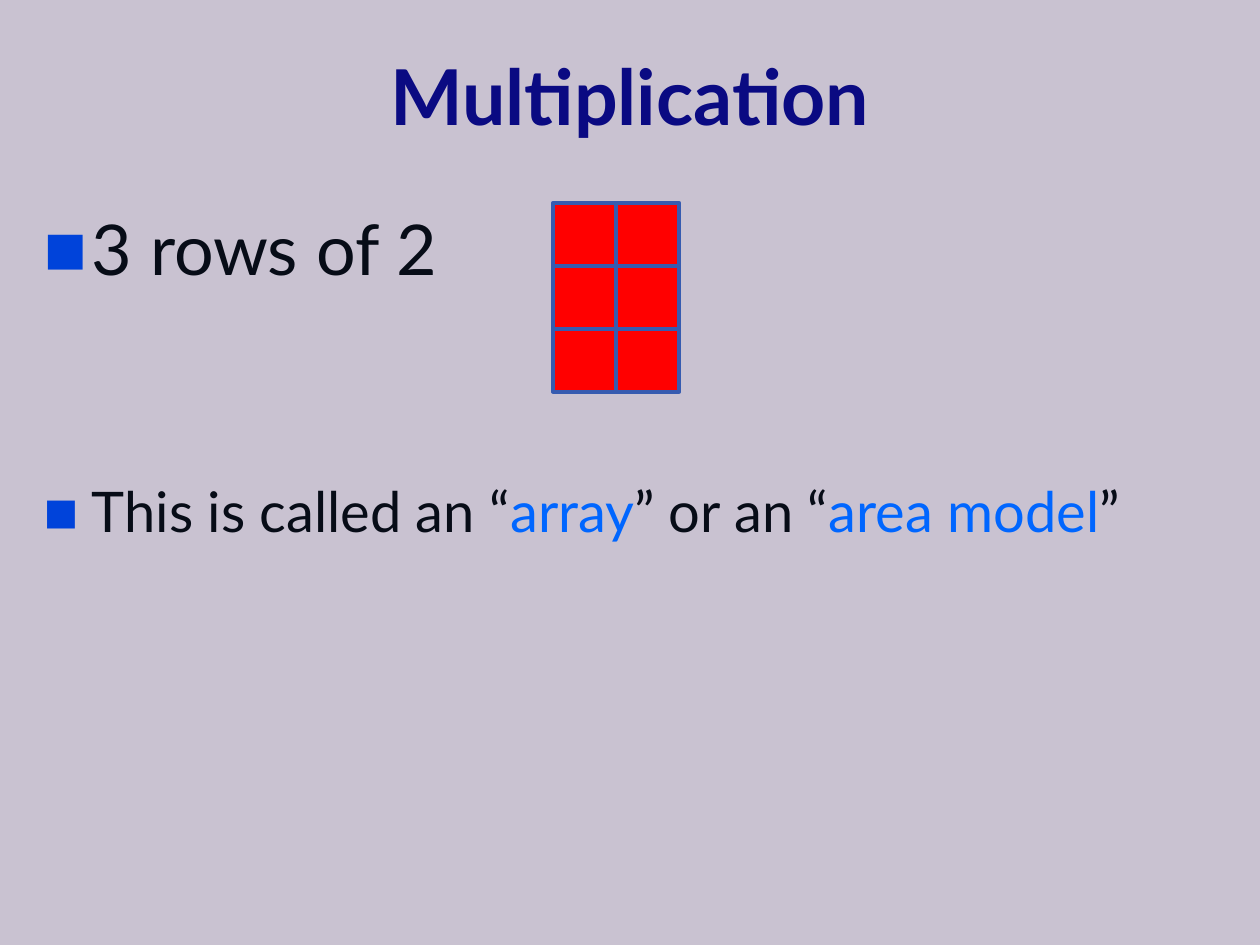
from itertools import product

from lxml.etree import SubElement
from pptx import Presentation
from pptx.dml.color import RGBColor
from pptx.enum.shapes import MSO_SHAPE
from pptx.enum.text import MSO_ANCHOR, PP_ALIGN
from pptx.oxml.ns import qn
from pptx.util import Inches, Pt

BACKGROUND = RGBColor(0xC9, 0xC2, 0xD1)
NAVY = RGBColor(0x0A, 0x0A, 0x82)
INK = RGBColor(0x07, 0x0C, 0x17)
TERM = RGBColor(0x00, 0x66, 0xFF)
BULLET = RGBColor(0x00, 0x43, 0xDA)
RED = RGBColor(0xFF, 0x00, 0x00)
OUTLINE = RGBColor(0x36, 0x5B, 0xB0)

FONT = "Lato"
ROWS, COLUMNS = 3, 2
CELL = Inches(0.5)
ARRAY_LEFT, ARRAY_TOP = Inches(4.39), Inches(1.61)
INDENT = Inches(0.38)


def add_span(para, text, color, **formats):
    span = para.add_run()
    span.text = text
    span.font.color.rgb = color
    for name, value in {"name": FONT, **formats}.items():
        setattr(span.font, name, value)


def add_bullet(para):
    """Give the paragraph a hanging indent and a small blue square."""
    props = para._p.get_or_add_pPr()
    props.set("marL", str(INDENT))
    props.set("indent", str(-INDENT))
    color = SubElement(props, qn("a:buClr"))
    SubElement(color, qn("a:srgbClr"), val=str(BULLET))
    SubElement(props, qn("a:buSzPct"), val="65000")
    SubElement(props, qn("a:buFont"), typeface=FONT)
    SubElement(props, qn("a:buChar"), char="■")


deck = Presentation()
deck.slide_width, deck.slide_height = Inches(10), Inches(7.5)
page = deck.slides.add_slide(deck.slide_layouts[6])
page.background.fill.solid()
page.background.fill.fore_color.rgb = BACKGROUND

# Title
margin = Inches(0.17)
title_box = page.shapes.add_textbox(
    margin, margin, deck.slide_width - 2 * margin, Inches(1.17))
title_box.text_frame.word_wrap = True
title_box.text_frame.vertical_anchor = MSO_ANCHOR.MIDDLE
title = title_box.text_frame.paragraphs[0]
title.alignment = PP_ALIGN.CENTER
add_span(title, "Multiplication", NAVY, size=Pt(44), bold=True)

# Bulleted statements, with room for the array between them
statements = [
    (Pt(40), Pt(0), [("3 rows of 2", INK)]),
    (Pt(32), Pt(107), [("This is called an “", INK), ("array", TERM),
                       ("” or an “", INK), ("area model", TERM), ("”", INK)]),
]
body_box = page.shapes.add_textbox(
    Inches(0.25), Inches(1.58), deck.slide_width * 0.95, Inches(5.58))
body = body_box.text_frame
body.word_wrap = True
for number, (size, gap, spans) in enumerate(statements):
    para = body.add_paragraph() if number else body.paragraphs[0]
    para.space_before = gap
    add_bullet(para)
    for text, color in spans:
        add_span(para, text, color, size=size)

# Array of unit squares
array = page.shapes.add_group_shape()
for row, column in product(range(ROWS), range(COLUMNS)):
    square = array.shapes.add_shape(
        MSO_SHAPE.RECTANGLE, ARRAY_LEFT + column * CELL,
        ARRAY_TOP + row * CELL, CELL, CELL)
    square.shadow.inherit = False
    square.fill.solid()
    square.fill.fore_color.rgb = RED
    square.line.color.rgb = OUTLINE
    square.line.width = Pt(2.25)

deck.save("out.pptx")
